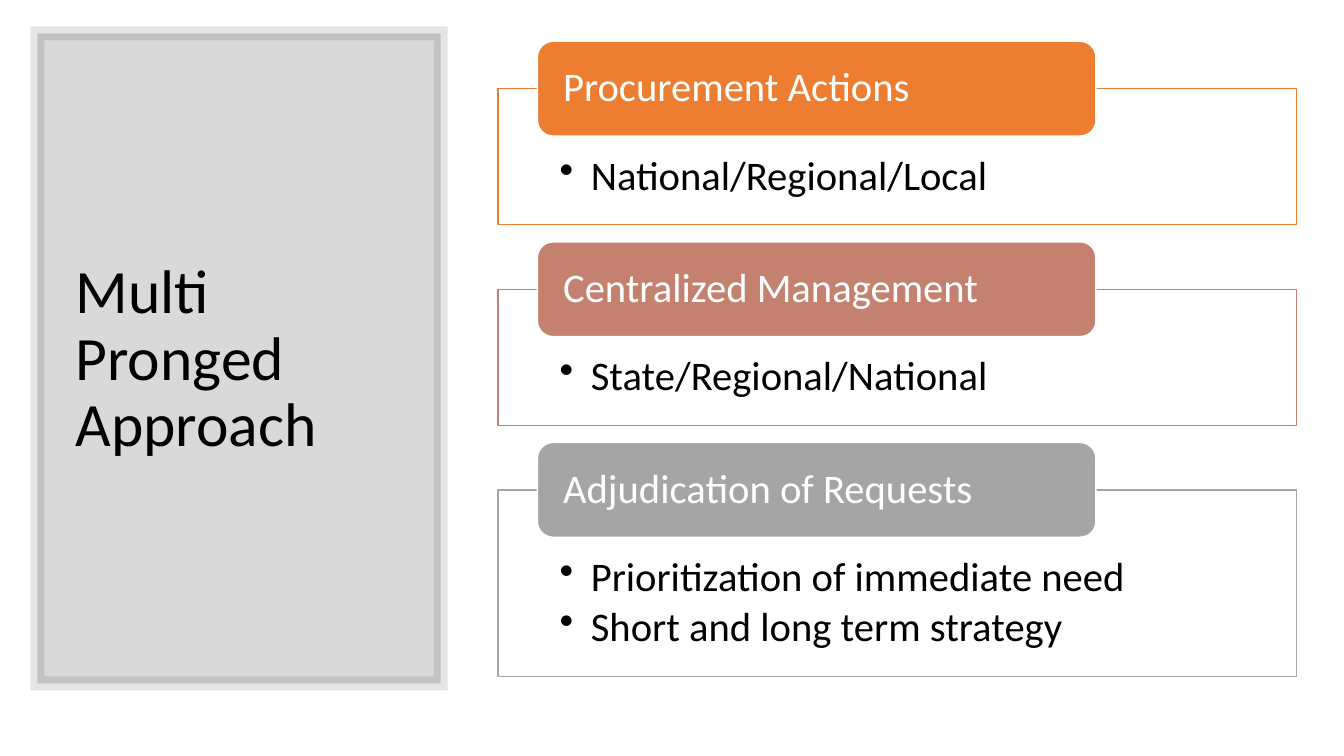
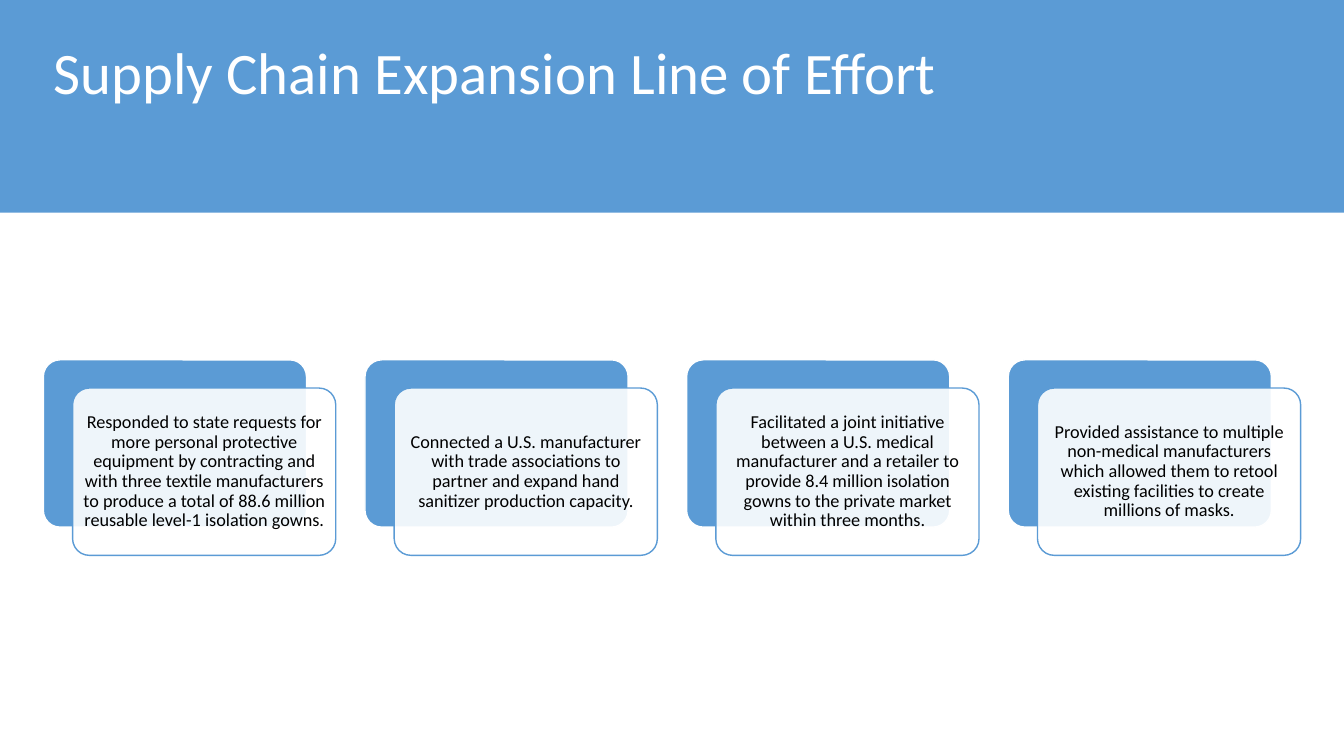
from dataclasses import dataclass

from lxml.etree import SubElement
from pptx import Presentation
from pptx.dml.color import RGBColor
from pptx.dml.fill import FillFormat
from pptx.enum.shapes import MSO_SHAPE as Preset
from pptx.enum.text import MSO_ANCHOR as Anchor
from pptx.enum.text import MSO_AUTO_SIZE as AutoSize
from pptx.enum.text import PP_ALIGN as Align
from pptx.oxml.ns import qn
from pptx.shapes.autoshape import Shape
from pptx.slide import Slide
from pptx.text.text import TextFrame
from pptx.util import Emu, Pt

PX = 9144
FONT = "Calibri"
BLACK, WHITE, BLUE = "000000", "FFFFFF", "5B9BD5"
SLIDE_WIDTH, SLIDE_HEIGHT = 1333, 750

PANEL_LEFT, PANEL_WIDTH, PANEL_TOP, PANEL_GAP = 494, 792, 88, 64
HEADER_LEFT, HEADER_WIDTH, HEADER_HEIGHT = 533, 554, 94
BULLET_INDENT = 31
CARD_LEFT, CARD_TOP, CARD_PITCH = 43, 357, 319
CARD_WIDTH, CARD_HEIGHT, CARD_SHIFT = 261, 166, 29


@dataclass(frozen=True)
class Box:
    left: int
    top: int
    width: int
    height: int


@dataclass(frozen=True)
class Insets:
    left: int
    top: int
    right: int
    bottom: int


@dataclass(frozen=True)
class TextStyle:
    size: int
    color: str
    insets: Insets
    anchor: Anchor = Anchor.MIDDLE
    align: Align = Align.LEFT
    space_after: float = 0


@dataclass(frozen=True)
class Panel:
    header: str
    bullets: tuple[str, ...]
    color: str
    height: int


HEADER_STYLE = TextStyle(29, WHITE, Insets(21, 0, 21, 0))
BULLET_STYLE = TextStyle(29, BLACK, Insets(61, 66, 61, 23), Anchor.TOP, space_after=4.4)
CARD_STYLE = TextStyle(13, BLACK, Insets(5, 5, 5, 5), align=Align.CENTER)
SIDE_TITLE_STYLE = TextStyle(44, BLACK, Insets(10, 5, 10, 5))
BAND_TITLE_STYLE = TextStyle(42, WHITE, Insets(10, 8, 10, 5), Anchor.TOP)

PANELS = (
    Panel("Procurement Actions", ("National/Regional/Local",), "ED7D31", 135),
    Panel("Centralized Management", ("State/Regional/National",), "C48170", 135),
    Panel(
        "Adjudication of Requests",
        ("Prioritization of immediate need", "Short and long term strategy"),
        "A5A5A5",
        185,
    ),
)

EFFORTS = (
    "Responded to state requests for more personal protective equipment by "
    "contracting and with three textile manufacturers to produce a total of "
    "88.6 million reusable level-1 isolation gowns.",
    "Connected a U.S. manufacturer with trade associations to partner and "
    "expand hand sanitizer production capacity.",
    "Facilitated a joint initiative between a U.S. medical manufacturer and a "
    "retailer to provide 8.4 million isolation gowns to the private market "
    "within three months.",
    "Provided assistance to multiple non-medical manufacturers which allowed "
    "them to retool existing facilities to create millions of masks.",
)


def px(length: int) -> Emu:
    return Emu(length * PX)


def rgb(color: str) -> RGBColor:
    return RGBColor.from_string(color)


def paint(fill: FillFormat, color: str, opacity: int = 100) -> None:
    fill.solid()
    fill.fore_color.rgb = rgb(color)


def set_opacity(shape: Shape, parent_tag: str, opacity: int) -> None:
    properties = shape.element.spPr
    parent = properties if parent_tag == "a:spPr" else properties.find(qn(parent_tag))
    color = parent.find(qn("a:solidFill")).find(qn("a:srgbClr"))
    SubElement(color, qn("a:alpha"), val=str(opacity * 1000))


def add_box(
    page: Slide,
    preset: Preset,
    box: Box,
    fill: str,
    line: str | None = None,
    opacity: int = 100,
) -> Shape:
    shape = page.shapes.add_shape(
        preset, px(box.left), px(box.top), px(box.width), px(box.height)
    )
    shape.shadow.inherit = False
    paint(shape.fill, fill)
    if opacity < 100:
        set_opacity(shape, "a:spPr", opacity)
    if line is None:
        shape.line.fill.background()
    else:
        paint(shape.line.fill, line)
        shape.line.width = Pt(1)
    return shape


def write(frame: TextFrame, text: str, style: TextStyle) -> None:
    frame.text = text
    frame.word_wrap = True
    frame.auto_size = AutoSize.NONE
    frame.vertical_anchor = style.anchor
    frame.margin_left = px(style.insets.left)
    frame.margin_top = px(style.insets.top)
    frame.margin_right = px(style.insets.right)
    frame.margin_bottom = px(style.insets.bottom)
    for para in frame.paragraphs:
        para.alignment = style.align
        para.line_spacing = 0.9
        para.space_before = Pt(0)
        para.space_after = Pt(style.space_after)
        for span in para.runs:
            span.font.name = FONT
            span.font.size = Pt(style.size)
            span.font.color.rgb = rgb(style.color)


def add_bullets(frame: TextFrame) -> None:
    for para in frame.paragraphs:
        properties = para._p.get_or_add_pPr()
        properties.set("marL", str(px(BULLET_INDENT)))
        properties.set("indent", str(-px(BULLET_INDENT)))
        SubElement(properties, qn("a:buChar"), char="•")


def place_title(page: Slide, text: str, box: Box, style: TextStyle) -> None:
    title = page.shapes.title
    title.left, title.top = px(box.left), px(box.top)
    title.width, title.height = px(box.width), px(box.height)
    write(title.text_frame, text, style)
    title.element.getparent().append(title.element)


def draw_sidebar(page: Slide) -> None:
    sidebar = add_box(
        page, Preset.RECTANGLE, Box(37, 33, 400, 645), BLACK, BLACK, opacity=15
    )
    sidebar.line.width = Pt(10)
    set_opacity(sidebar, "a:ln", 10)
    SubElement(sidebar.element.spPr.find(qn("a:ln")), qn("a:miter"), lim="800000")


def draw_panel(page: Slide, panel: Panel, top: int) -> None:
    body = add_box(
        page,
        Preset.RECTANGLE,
        Box(PANEL_LEFT, top, PANEL_WIDTH, panel.height),
        WHITE,
        panel.color,
        opacity=90,
    )
    write(body.text_frame, "\n".join(panel.bullets), BULLET_STYLE)
    add_bullets(body.text_frame)
    header_box = Box(HEADER_LEFT, top - HEADER_HEIGHT // 2, HEADER_WIDTH, HEADER_HEIGHT)
    header = add_box(page, Preset.ROUNDED_RECTANGLE, header_box, panel.color, WHITE)
    write(header.text_frame, panel.header, HEADER_STYLE)


def draw_card(page: Slide, text: str, left: int) -> None:
    back_box = Box(left, CARD_TOP, CARD_WIDTH, CARD_HEIGHT)
    front_box = Box(
        left + CARD_SHIFT, CARD_TOP + CARD_SHIFT - 1, CARD_WIDTH, CARD_HEIGHT
    )
    back = add_box(page, Preset.ROUNDED_RECTANGLE, back_box, BLUE, WHITE)
    front = add_box(
        page, Preset.ROUNDED_RECTANGLE, front_box, WHITE, BLUE, opacity=90
    )
    for shape in (back, front):
        shape.adjustments[0] = 0.1
    write(front.text_frame, text, CARD_STYLE)


def build_approach(page: Slide) -> None:
    draw_sidebar(page)
    place_title(page, "Multi Pronged Approach", Box(65, 70, 346, 575), SIDE_TITLE_STYLE)
    top = PANEL_TOP
    for panel in PANELS:
        draw_panel(page, panel, top)
        top += panel.height + PANEL_GAP


def build_supply_chain(page: Slide) -> None:
    add_box(page, Preset.RECTANGLE, Box(0, 0, SLIDE_WIDTH, 211), BLUE)
    place_title(
        page,
        "Supply Chain Expansion Line of Effort",
        Box(43, 35, 1248, 145),
        BAND_TITLE_STYLE,
    )
    for index, effort in enumerate(EFFORTS):
        draw_card(page, effort, CARD_LEFT + index * CARD_PITCH)


def main() -> None:
    deck = Presentation()
    deck.slide_width, deck.slide_height = px(SLIDE_WIDTH), px(SLIDE_HEIGHT)
    title_only = deck.slide_layouts[5]
    for build in (build_approach, build_supply_chain):
        build(deck.slides.add_slide(title_only))
    deck.save("out.pptx")


if __name__ == "__main__":
    main()
